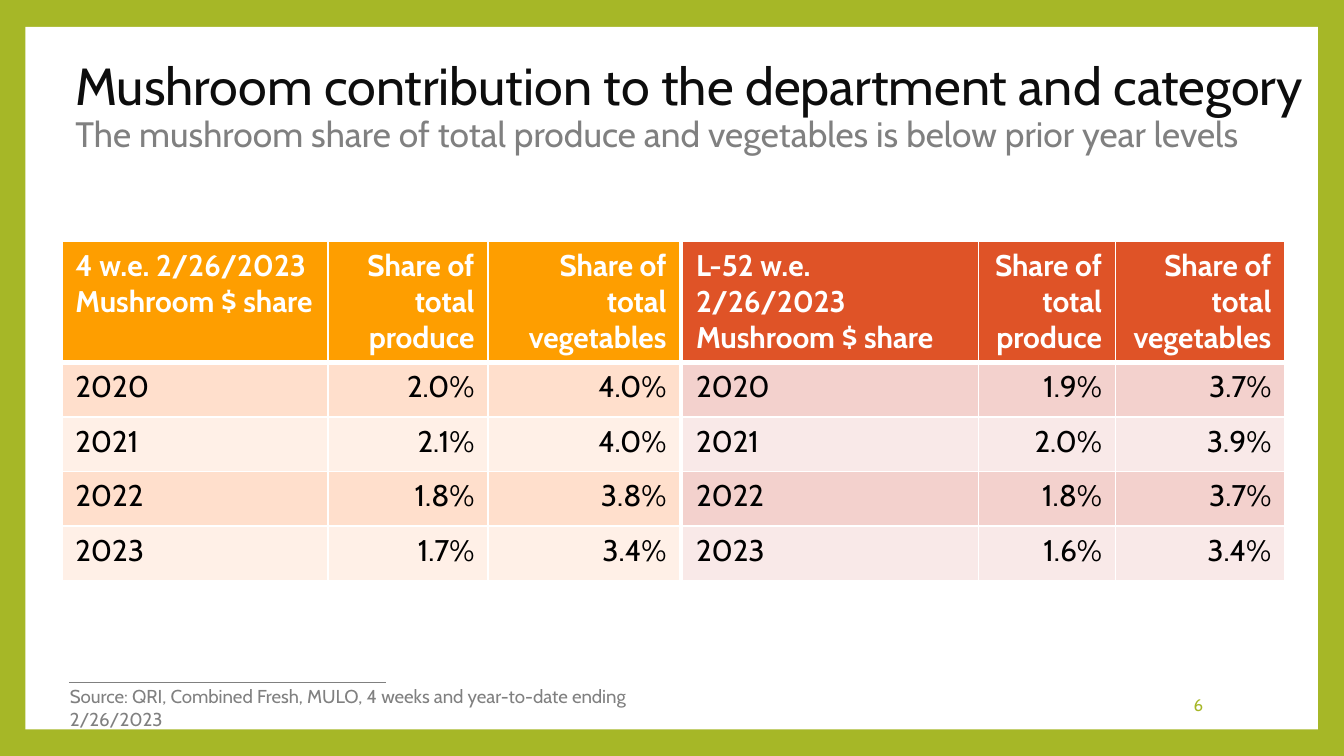
from dataclasses import dataclass

from lxml import etree
from pptx import Presentation
from pptx import util as u
from pptx.dml.color import RGBColor
from pptx.enum import shapes, text
from pptx.oxml.ns import qn

FONT = "Cabin"
GREEN, GREY, WHITE = "A6B727", "808080", "FFFFFF"
YEARS = ("2020", "2021", "2022", "2023")
HEADS = ("Share of total produce", "Share of total vegetables")
TOP, HEAD_H, ROW_H = 4.55, 2.28, 1.03


@dataclass
class Share:
    """One table of mushroom shares by year."""
    left: float
    cols: tuple
    title: str
    head: str
    bands: tuple
    vals: tuple


TABLES = (
    Share(1.17, (5.03, 3.02, 3.63), "4 w.e. 2/26/2023\vMushroom $ share",
          "FE9E00", ("FFDFCC", "FFF0E7"),
          (("2.0%", "4.0%"), ("2.1%", "4.0%"), ("1.8%", "3.8%"), ("1.7%", "3.4%"))),
    Share(12.9, (5.59, 2.59, 3.2), "L-52 w.e. 2/26/2023\vMushroom $ share",
          "DF5327", ("F3D1CD", "F9E9E8"),
          (("1.9%", "3.7%"), ("2.0%", "3.9%"), ("1.8%", "3.7%"), ("1.6%", "3.4%"))),
)


def paint(fill, color: str) -> None:
    fill.solid()
    fill.fore_color.rgb = RGBColor.from_string(color)


def style(run, size: float, color: str, bold: bool = False) -> None:
    run.font.name = FONT
    run.font.size = u.Pt(size)
    run.font.bold = bold
    run.font.color.rgb = RGBColor.from_string(color)


def edge(cell, sides: dict) -> None:
    """Draw white cell borders; sides maps L, R, T, B in order to points."""
    props = cell._tc.get_or_add_tcPr()
    for i, (side, width) in enumerate(sides.items()):
        line = etree.Element(qn(f"a:ln{side}"), w=str(u.Pt(width)))
        fill = etree.SubElement(line, qn("a:solidFill"))
        etree.SubElement(fill, qn("a:srgbClr"), val=WHITE)
        props.insert(i, line)


def add_share(slide, share: Share) -> None:
    rows = [(share.title, *HEADS)]
    rows += [(year, *vals) for year, vals in zip(YEARS, share.vals)]
    high = HEAD_H + ROW_H * len(YEARS)
    table = slide.shapes.add_table(
        len(rows), len(share.cols), u.Cm(share.left), u.Cm(TOP),
        u.Cm(sum(share.cols)), u.Cm(high)).table
    for col, width in zip(table.columns, share.cols):
        col.width = u.Cm(width)
    for r, row in enumerate(rows):
        head = r == 0
        table.rows[r].height = u.Cm(HEAD_H if head else ROW_H)
        for c, label in enumerate(row):
            cell = table.cell(r, c)
            paint(cell.fill, share.head if head else share.bands[(r - 1) % 2])
            edge(cell, {"L": 1, "R": 1, "T": 3 if r == 1 else 1, "B": 3 if head else 1})
            para = cell.text_frame.paragraphs[0]
            para.text = label
            para.alignment = text.PP_ALIGN.RIGHT if c else text.PP_ALIGN.LEFT
            for run in para.runs:
                style(run, 16, WHITE if head else "000000", head)


def add_note(slide, box: tuple, label: str, size: float, color: str):
    frame = slide.shapes.add_textbox(*map(u.Cm, box)).text_frame
    frame.word_wrap = True
    frame.text = label
    style(frame.paragraphs[0].runs[0], size, color)
    return frame


def set_title(title) -> None:
    title.left, title.top, title.width, title.height = map(u.Cm, (1.17, 1.35, 24.33, 1.37))
    frame = title.text_frame
    frame.text = ("Mushroom contribution to the department and category\v"
                  "The mushroom share of total produce and vegetables is below prior year levels")
    frame.word_wrap = True
    frame.auto_size = text.MSO_AUTO_SIZE.NONE
    frame.vertical_anchor = text.MSO_ANCHOR.MIDDLE
    para = frame.paragraphs[0]
    para.alignment = text.PP_ALIGN.LEFT
    para.line_spacing = 0.9
    main, sub = para.runs
    style(main, 27.9, "0D0D0D")
    style(sub, 18.9, GREY)


def main() -> None:
    deck = Presentation()
    deck.slide_width, deck.slide_height = u.Cm(25.4), u.Cm(14.29)
    slide = deck.slides.add_slide(deck.slide_layouts[5])
    paint(slide.background.fill, GREEN)

    panel = slide.shapes.add_shape(
        shapes.MSO_SHAPE.RECTANGLE, *map(u.Cm, (0.48, 0.51, 24.43, 13.28)))
    panel.shadow.inherit = False
    paint(panel.fill, WHITE)
    panel.line.fill.background()
    title = slide.shapes.title
    title.element.addprevious(panel.element)
    set_title(title)

    rule = slide.shapes.add_connector(
        shapes.MSO_CONNECTOR.STRAIGHT, *map(u.Cm, (1.3, 12.9, 7.29, 12.9)))
    rule.line.width = u.Pt(0.79)
    paint(rule.line.fill, GREY)
    etree.SubElement(rule.element.spPr, qn("a:effectLst"))

    for share in TABLES:
        add_share(slide, share)

    add_note(slide, (1.07, 12.83, 12.5, 0.69),
             "Source: QRI, Combined Fresh, MULO, 4 weeks and year-to-date ending 2/26/2023",
             10, GREY)
    page = add_note(slide, (19.43, 12.95, 3.56, 0.76), "6", 9, GREEN)
    page.vertical_anchor = text.MSO_ANCHOR.MIDDLE
    page.paragraphs[0].alignment = text.PP_ALIGN.RIGHT
    deck.save("out.pptx")


if __name__ == "__main__":
    main()
